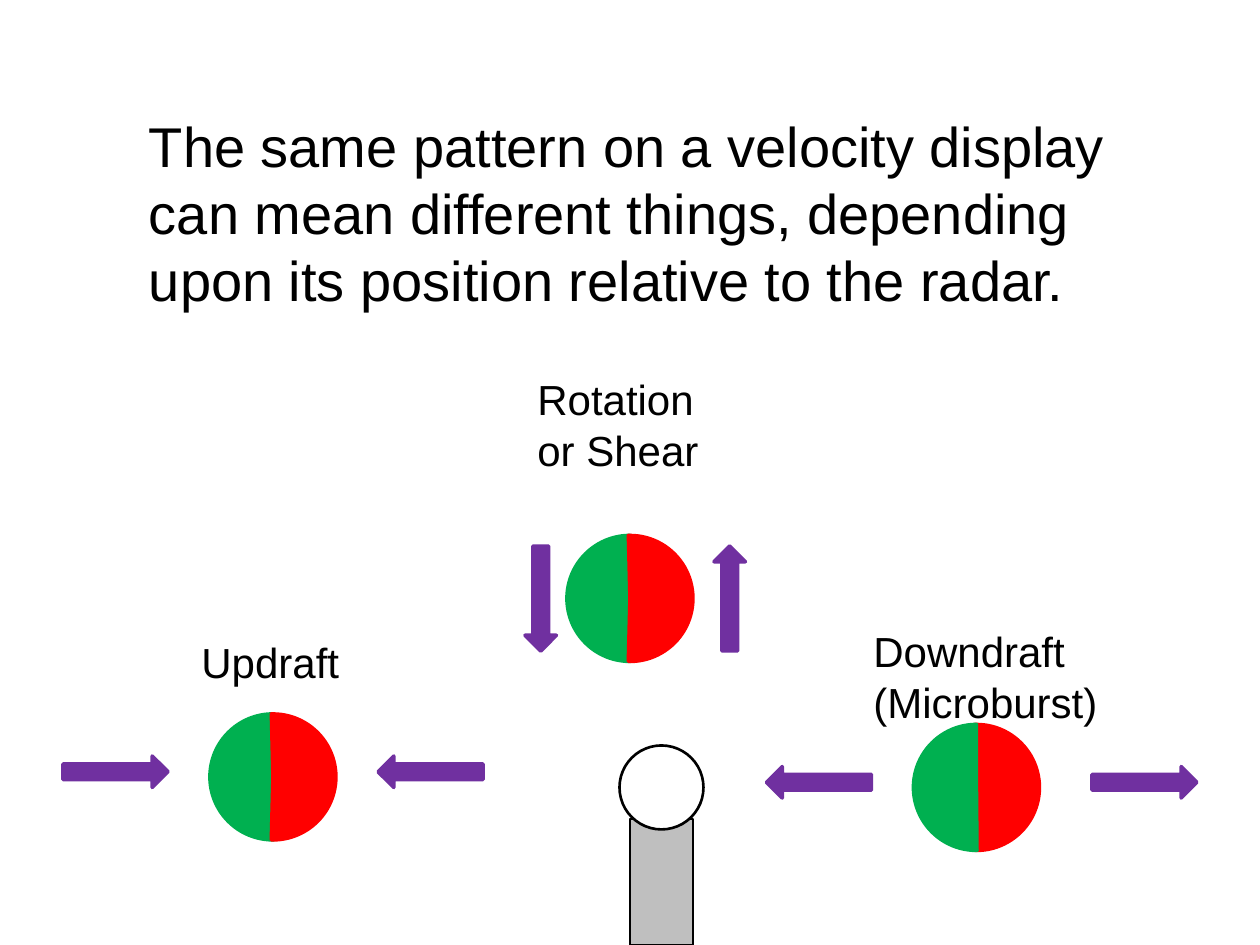
from pptx import Presentation
from pptx.dml.color import RGBColor
from pptx.enum.shapes import MSO_SHAPE
from pptx.util import Pt

PX = 7620
GREEN, RED, PURPLE = "00B050", "FF0000", "7030A0"
GREEN_HALF = (GREEN, 53.682, 162)
RED_HALF = (RED, 161.142, 54.893)

prs = Presentation()
prs.slide_width, prs.slide_height = 1200 * PX, 900 * PX
s = prs.slides.add_slide(prs.slide_layouts[6])


def rgb(value):
    return RGBColor.from_string(value)


def add(kind, x, y, w, h, fill, line, width=2):
    sp = s.shapes.add_shape(kind, x * PX, y * PX, w * PX, h * PX)
    sp.shadow.inherit = False
    sp.fill.solid()
    sp.fill.fore_color.rgb = rgb(fill)
    sp.line.color.rgb = rgb(line)
    sp.line.width = Pt(width)
    return sp


add(MSO_SHAPE.RECTANGLE, 600, 780, 60, 120, "BFBFBF", "000000", 1.5)
add(MSO_SHAPE.OVAL, 590, 710, 80, 80, "FFFFFF", "000000", 1.5)

for x, y, halves in [
    (540, 510, (GREEN_HALF, RED_HALF)),
    (870, 690, (RED_HALF, GREEN_HALF)),
    (200, 680, (GREEN_HALF, RED_HALF)),
]:
    for color, start, end in halves:
        sp = add(MSO_SHAPE.PIE, x, y, 120, 120, color, color)
        sp.adjustments[0] = start
        sp.adjustments[1] = end

for x, y, angle in [
    (60, 720, 0),
    (1040, 730, 0),
    (360, 720, 180),
    (730, 730, 180),
    (465, 555, 90),
    (645, 555, 270),
]:
    add(MSO_SHAPE.RIGHT_ARROW, x, y, 100, 30, PURPLE, PURPLE).rotation = angle

for text, x, y, w, h, size, wrap in [
    ("Updraft", 180, 600, 157, 61, 24, False),
    ("Downdraft (Microburst)", 820, 590, 240, 109, 24, True),
    ("Rotation or Shear", 500, 350, 180, 109, 24, True),
    ("The same pattern on a velocity display can mean different things, "
     "depending upon its position relative to the radar.",
     130, 100, 1030, 206, 32, True),
]:
    tf = s.shapes.add_textbox(x * PX, y * PX, w * PX, h * PX).text_frame
    tf.word_wrap = wrap
    p = tf.paragraphs[0]
    p.text = text
    p.font.name = "Arial"
    p.font.size = Pt(size)
    p.font.color.rgb = rgb("000000")

prs.save("out.pptx")
